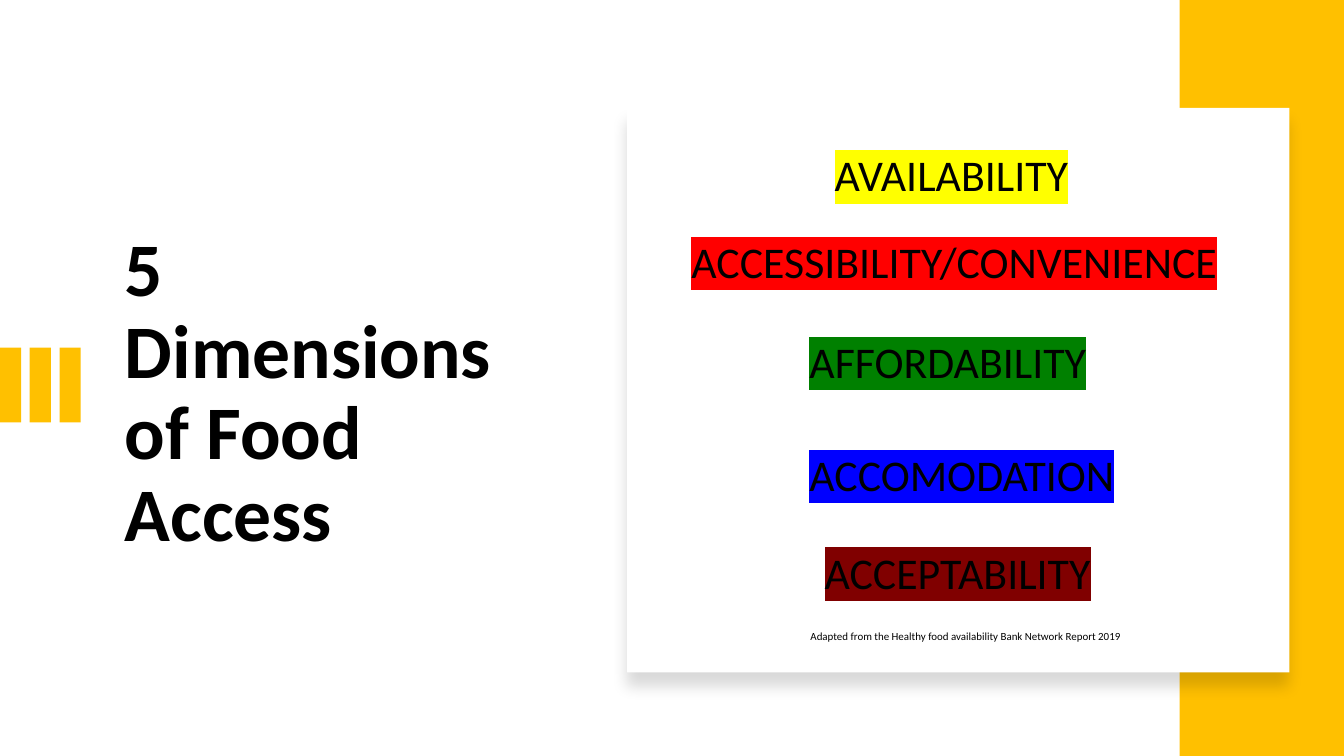
from lxml import etree
from pptx import Presentation
from pptx.dml.color import RGBColor
from pptx.enum.shapes import MSO_SHAPE as Preset
from pptx.enum.text import MSO_ANCHOR as Anchor, MSO_AUTO_SIZE as AutoSize
from pptx.oxml.ns import qn
from pptx.util import Inches, Pt

BLACK = RGBColor(0x00, 0x00, 0x00)
WHITE = RGBColor(0xFF, 0xFF, 0xFF)
AMBER = RGBColor(0xFF, 0xC0, 0x00)
YELLOW = RGBColor(0xFF, 0xFF, 0x00)
RED = RGBColor(0xFF, 0x00, 0x00)
GREEN = RGBColor(0x00, 0x80, 0x00)
BLUE = RGBColor(0x00, 0x00, 0xFF)
MAROON = RGBColor(0x80, 0x00, 0x00)

FONT = "Calibri"
DIMENSIONS = [
    ("AVAILABILITY", 8.18, 1.42, 2.74, YELLOW),
    ("ACCESSIBILITY/CONVENIENCE", 6.76, 2.28, 5.5, RED),
    ("AFFORDABILITY", 7.93, 3.27, 3, GREEN),
    ("ACCOMODATION", 7.93, 4.39, 3.33, BLUE),
    ("ACCEPTABILITY", 8.08, 5.36, 2.85, MAROON),
]


def add_block(page, left, top, width, height, color):
    block = page.shapes.add_shape(
        Preset.RECTANGLE, Inches(left), Inches(top), Inches(width), Inches(height)
    )
    block.shadow.inherit = False
    block.fill.solid()
    block.fill.fore_color.rgb = color
    block.line.fill.background()
    return block


def add_drop_shadow(block, color, alpha, blur, distance, angle):
    effects = block._element.spPr.find(qn("a:effectLst"))
    shadow = etree.SubElement(
        effects,
        qn("a:outerShdw"),
        blurRad=str(Pt(blur)),
        dist=str(Pt(distance)),
        dir=str(angle * 60000),
        algn="t",
        rotWithShape="0",
    )
    tint = etree.SubElement(shadow, qn("a:srgbClr"), val=str(color))
    etree.SubElement(tint, qn("a:alpha"), val=str(alpha * 1000))


def highlight(span, color):
    mark = etree.Element(qn("a:highlight"))
    etree.SubElement(mark, qn("a:srgbClr"), val=str(color))
    span.font._element.find(qn("a:solidFill")).addnext(mark)


def add_text(page, text, left, top, width, height, size, wrap=True):
    box = page.shapes.add_textbox(
        Inches(left), Inches(top), Inches(width), Inches(height)
    )
    frame = box.text_frame
    frame.word_wrap = wrap
    frame.auto_size = AutoSize.SHAPE_TO_FIT_TEXT
    para = frame.paragraphs[0]
    para.space_after = Pt(6)
    span = para.add_run()
    span.text = text
    span.font.name = FONT
    span.font.size = Pt(size)
    span.font.color.rgb = BLACK
    return frame, para, span


def add_title(page):
    frame, para, span = add_text(
        page, "5 Dimensions of Food Access", 1.14, 1.62, 4.26, 4.59, 54
    )
    frame.auto_size = AutoSize.NONE
    frame.vertical_anchor = Anchor.MIDDLE
    para.space_after = Pt(0)
    para.line_spacing = 0.9
    span.font.bold = True


def main():
    deck = Presentation()
    deck.slide_width = Inches(13.33)
    deck.slide_height = Inches(7.5)
    page = deck.slides.add_slide(deck.slide_layouts[6])

    add_title(page)
    for index in range(3):
        add_block(page, index * 0.295, 3.45, 0.21, 0.74, AMBER)
    add_block(page, 11.7, 0, 1.63, 7.5, AMBER)
    card = add_block(page, 6.22, 1.07, 6.57, 5.6, WHITE)
    add_drop_shadow(card, BLACK, alpha=15, blur=11, distance=10, angle=90)

    for name, left, top, width, color in DIMENSIONS:
        frame, para, span = add_text(page, name, left, top, width, 0.63, 31.3)
        highlight(span, color)
    add_text(
        page,
        "Adapted from the Healthy food availability Bank Network Report 2019",
        7.94, 6.2, 3.33, 0.23, 7.8, wrap=False,
    )

    deck.save("out.pptx")


if __name__ == "__main__":
    main()
